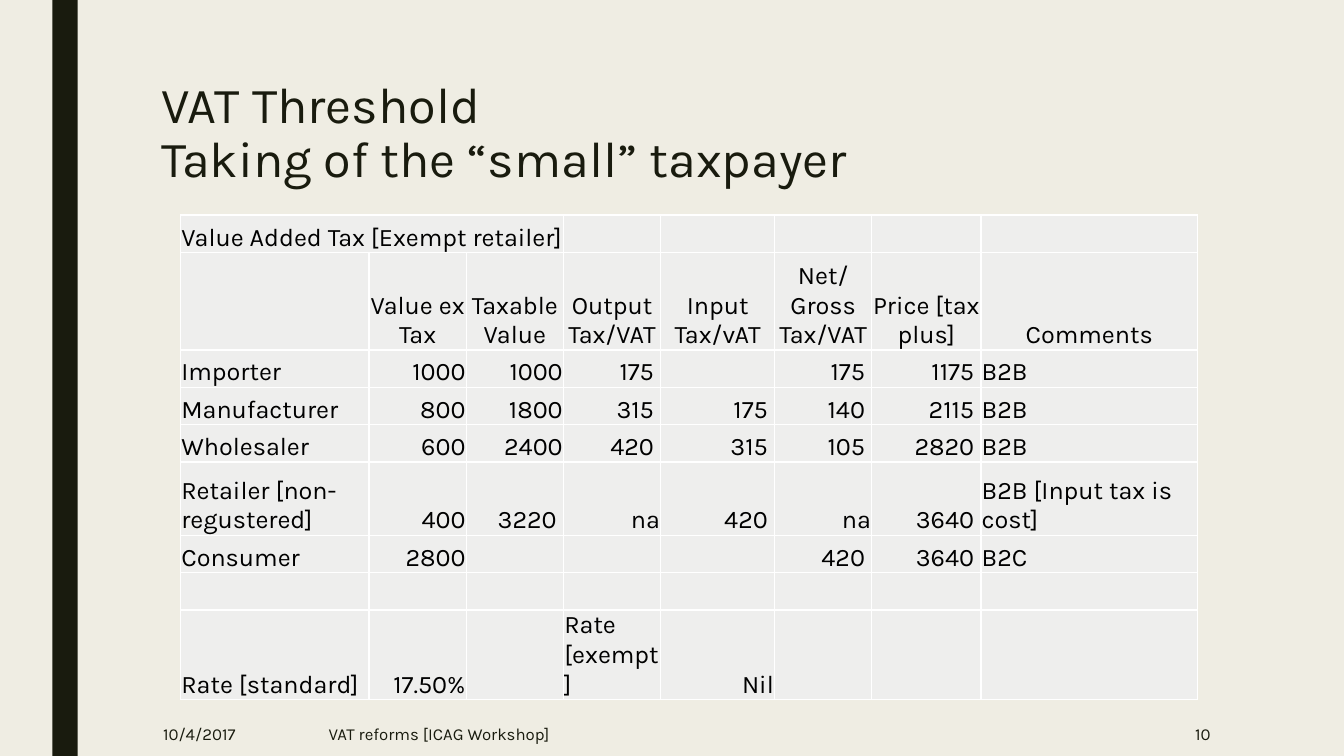
from lxml.etree import SubElement
from pptx import Presentation
from pptx.dml.color import RGBColor
from pptx.enum.shapes import MSO_SHAPE
from pptx.enum.text import MSO_ANCHOR as Anchor, MSO_AUTO_SIZE as AutoSize, PP_ALIGN as Align
from pptx.oxml.ns import qn
from pptx.util import Cm, Pt

FONT = "Karla"
BACKGROUND = RGBColor(0xEF, 0xED, 0xE3)
DARK = RGBColor(0x19, 0x1B, 0x0E)
BLACK = RGBColor(0, 0, 0)
CELL_FILL = RGBColor(0xEE, 0xEE, 0xED)
BORDER = RGBColor(0xFF, 0xFF, 0xFF)

TITLE_LINES = ["VAT Threshold", "Taking of the “small” taxpayer"]
COLUMN_WIDTHS = [4.75, 2.45, 2.45, 2.45, 2.87, 2.45, 2.75, 5.46]
ROW_HEIGHTS = [0.94, 2.46, 0.94, 0.94, 0.94, 1.85, 0.94, 0.94, 1.7]
HEADER_ROW = 1
TAX_ROWS = [
    ["Value Added Tax [Exempt retailer]", "", "", "", "", "", "", ""],
    ["", "Value ex Tax", "Taxable Value", "Output Tax/VAT", "Input Tax/vAT",
     "Net/Gross Tax/VAT", "Price [tax plus]", "Comments"],
    ["Importer", "1000", "1000", "175 ", "", "175 ", "1175 ", "B2B"],
    ["Manufacturer", "800", "1800", "315 ", "175 ", "140 ", "2115 ", "B2B"],
    ["Wholesaler", "600", "2400", "420 ", "315 ", "105 ", "2820 ", "B2B"],
    ["Retailer [non-regustered]", "400", "3220 ", "na", "420 ", "na", "3640 ",
     "B2B [Input tax is cost]"],
    ["Consumer", "2800", "", "", "", "420 ", "3640 ", "B2C"],
    ["", "", "", "", "", "", "", ""],
    ["Rate [standard]", "17.50%", "", "Rate [exempt]", "Nil", "", "", ""],
]


def write(paragraph, text, size=18, color=BLACK, align=Align.LEFT):
    paragraph.alignment = align
    font = paragraph.font
    font.name, font.size = FONT, Pt(size)
    font.color.rgb = color
    for index, line in enumerate(text.splitlines()):
        if index:
            paragraph.add_line_break()
        run = paragraph.add_run()
        run.text = line
        run.font.name, run.font.size = FONT, Pt(size)
        run.font.color.rgb = color


def add_side_bar(slide, height):
    bar = slide.shapes.add_shape(MSO_SHAPE.RECTANGLE, Cm(1.32), 0, Cm(0.64), height)
    bar.shadow.inherit = False
    bar.fill.solid()
    bar.fill.fore_color.rgb = DARK
    bar.line.fill.background()


def format_title(slide):
    title = slide.shapes.title
    title.left, title.top, title.width, title.height = Cm(3.81), Cm(1.9), Cm(26.67), Cm(3.5)
    frame = title.text_frame
    frame.word_wrap = True
    frame.auto_size = AutoSize.NONE
    frame.vertical_anchor = Anchor.TOP
    paragraph = frame.paragraphs[0]
    paragraph.line_spacing = 0.89
    write(paragraph, "\n".join(TITLE_LINES), size=36, color=DARK)


def add_footer(slide, text, left, width, align=Align.LEFT):
    box = slide.shapes.add_textbox(Cm(left), Cm(17.93), Cm(width), Cm(1.12))
    frame = box.text_frame
    frame.word_wrap = True
    frame.vertical_anchor = Anchor.MIDDLE
    write(frame.paragraphs[0], text, size=12, color=DARK, align=align)


def format_cell(cell):
    cell.margin_left = cell.margin_right = cell.margin_top = Cm(0.02)
    cell.margin_bottom = 0
    cell.vertical_anchor = Anchor.BOTTOM
    properties = cell._tc.get_or_add_tcPr()
    for side in ("lnL", "lnR", "lnT", "lnB"):
        line = SubElement(properties, qn(f"a:{side}"), w=str(Pt(1)))
        fill = SubElement(line, qn("a:solidFill"))
        SubElement(fill, qn("a:srgbClr"), val=str(BORDER))
    cell.fill.solid()
    cell.fill.fore_color.rgb = CELL_FILL


def cell_alignment(row, column, text):
    if row == HEADER_ROW:
        return Align.CENTER
    if column in (0, len(COLUMN_WIDTHS) - 1) or text.startswith("Rate"):
        return Align.LEFT
    return Align.RIGHT


def add_tax_table(slide):
    frame = slide.shapes.add_table(
        len(ROW_HEIGHTS), len(COLUMN_WIDTHS), Cm(4.55), Cm(5.42),
        Cm(sum(COLUMN_WIDTHS)), Cm(sum(ROW_HEIGHTS)))
    table = frame.table
    table.first_row = table.horz_banding = False
    for column, width in zip(table.columns, COLUMN_WIDTHS):
        column.width = Cm(width)
    for row, height in zip(table.rows, ROW_HEIGHTS):
        row.height = Cm(height)
    for row, texts in enumerate(TAX_ROWS):
        for column, text in enumerate(texts):
            cell = table.cell(row, column)
            format_cell(cell)
            write(cell.text_frame.paragraphs[0], text,
                  align=cell_alignment(row, column, text))
    table.cell(0, 0).merge(table.cell(0, 2))


def main():
    presentation = Presentation()
    presentation.slide_width, presentation.slide_height = Cm(33.87), Cm(19.05)
    slide = presentation.slides.add_slide(presentation.slide_layouts.get_by_name("Title Only"))
    slide.background.fill.solid()
    slide.background.fill.fore_color.rgb = BACKGROUND
    add_side_bar(slide, presentation.slide_height)
    format_title(slide)
    add_tax_table(slide)
    add_footer(slide, "10/4/2017", 3.86, 3.35)
    add_footer(slide, "VAT reforms [ICAG Workshop]", 8.03, 17.45)
    add_footer(slide, "10", 26.31, 4.45, align=Align.RIGHT)
    presentation.save("out.pptx")


if __name__ == "__main__":
    main()
